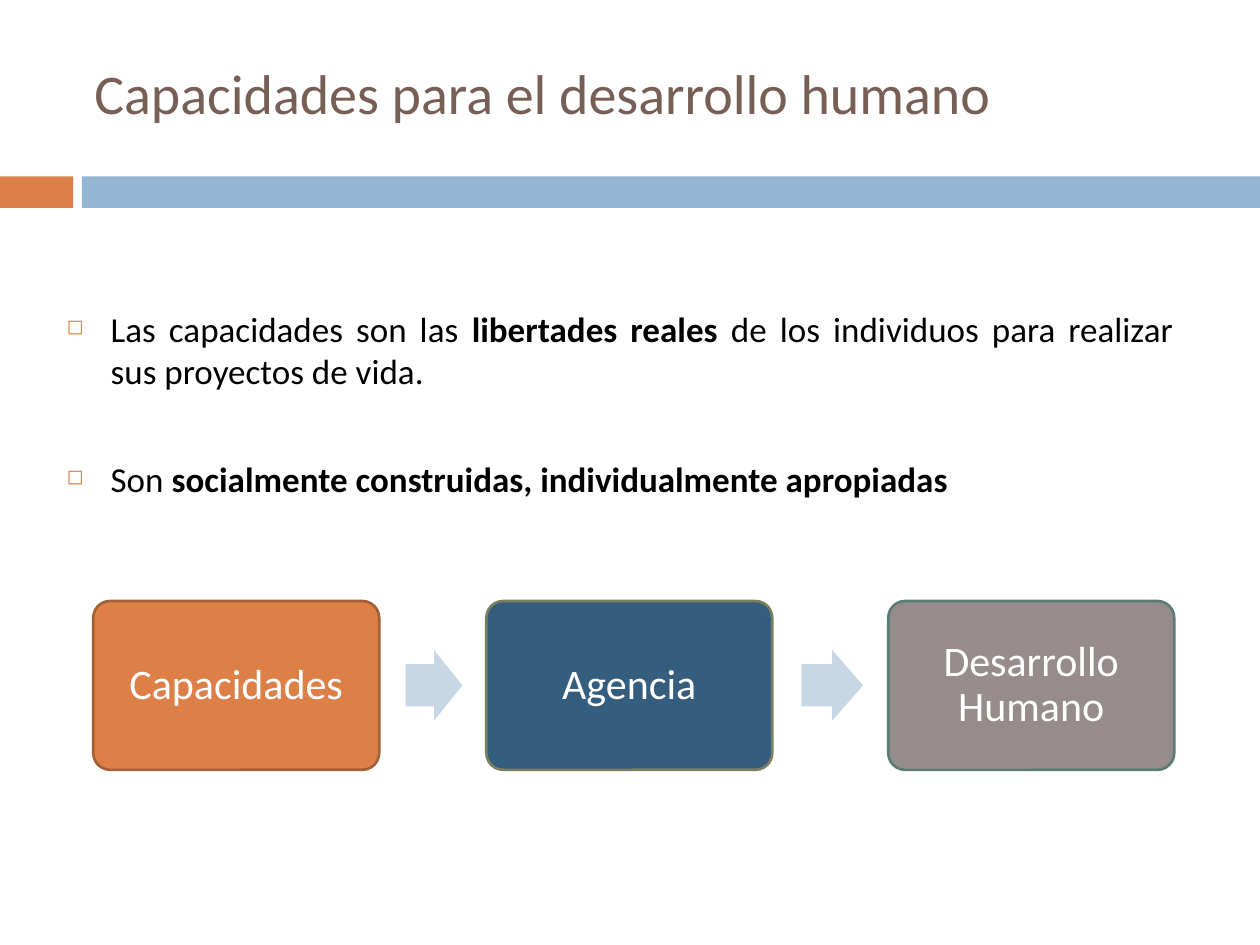
from lxml import etree
from pptx import Presentation
from pptx.dml.color import RGBColor
from pptx.enum.shapes import MSO_SHAPE
from pptx.enum.text import MSO_ANCHOR, PP_ALIGN
from pptx.oxml.ns import qn
from pptx.util import Inches, Pt

RECTANGLE = MSO_SHAPE.RECTANGLE
ROUNDED = MSO_SHAPE.ROUNDED_RECTANGLE
ARROW = MSO_SHAPE.RIGHT_ARROW
MIDDLE = MSO_ANCHOR.MIDDLE
CENTER = PP_ALIGN.CENTER
JUSTIFY = PP_ALIGN.JUSTIFY
FONT = "Calibri"
BLANK_LAYOUT = 6
COLORS = {
    "title": "775F55",
    "text": "000000",
    "white": "FFFFFF",
    "orange": "DD8047",
    "orange_line": "A35F35",
    "band": "94B6D2",
    "navy": "355D7E",
    "olive_line": "7A7F5F",
    "gray": "968C8C",
    "teal_line": "5B7C74",
    "arrow": "C8D7E5",
}
BULLETS = [
    [("Las capacidades son las ", False), ("libertades reales ", True),
     ("de los individuos para realizar sus proyectos de vida.", False)],
    [("Son ", False),
     ("socialmente construidas, individualmente apropiadas", True)],
]
STEPS = [
    ("Capacidades", "orange", "orange_line", 0),
    ("Agencia", "navy", "olive_line", 3.12),
    ("Desarrollo Humano", "gray", "teal_line", 6.31),
]


def color(name):
    return RGBColor.from_string(COLORS[name])


def format_run(run, size, color_name, bold=False):
    run.font.name = FONT
    run.font.size = Pt(size)
    run.font.bold = bold
    run.font.color.rgb = color(color_name)


def add_box(slide, kind, left, top, width, height, fill, line=None):
    shape = slide.shapes.add_shape(
        kind, Inches(left), Inches(top), Inches(width), Inches(height))
    shape.shadow.inherit = False
    shape.fill.solid()
    shape.fill.fore_color.rgb = color(fill)
    if line:
        shape.line.color.rgb = color(line)
        shape.line.width = Pt(1.5)
    else:
        shape.line.fill.background()
    return shape


def add_text_box(slide, left, top, width, height):
    text_box = slide.shapes.add_textbox(
        Inches(left), Inches(top), Inches(width), Inches(height))
    text_box.text_frame.word_wrap = True
    return text_box.text_frame


def add_title(slide, left, top, width, height):
    text_frame = add_text_box(slide, left, top, width, height)
    text_frame.vertical_anchor = MIDDLE
    text_frame.text = "Capacidades para el desarrollo humano"
    format_run(text_frame.paragraphs[0].runs[0], 32, "title")


def add_band(slide, left, top, width, height):
    accent, gap = 0.58, 0.07
    offset = accent + gap
    add_box(slide, RECTANGLE, left, top, accent, height, "orange")
    add_box(slide, RECTANGLE, left + offset, top, width - offset, height, "band")


def set_bullet(paragraph):
    properties = paragraph._p.get_or_add_pPr()
    properties.set("marL", str(Inches(0.35)))
    properties.set("indent", str(-Inches(0.35)))
    bullet_color = etree.SubElement(properties, qn("a:buClr"))
    etree.SubElement(bullet_color, qn("a:srgbClr"), val=COLORS["orange"])
    etree.SubElement(properties, qn("a:buSzPct"), val="60000")
    etree.SubElement(properties, qn("a:buChar"), char="◻")


def add_bullets(slide, left, top, width, height):
    text_frame = add_text_box(slide, left, top, width, height)
    for index, parts in enumerate(BULLETS):
        paragraph = text_frame.add_paragraph() if index else text_frame.paragraphs[0]
        paragraph.alignment = JUSTIFY
        paragraph.space_before = Pt(38 if index else 0)
        set_bullet(paragraph)
        for text, bold in parts:
            run = paragraph.add_run()
            run.text = text
            format_run(run, 20, "text", bold)


def add_step(slide, left, top, width, height, label, fill, line):
    shape = add_box(slide, ROUNDED, left, top, width, height, fill, line)
    shape.adjustments[0] = 0.1
    text_frame = shape.text_frame
    text_frame.word_wrap = True
    text_frame.vertical_anchor = MIDDLE
    text_frame.margin_left = text_frame.margin_right = Inches(0.14)
    text_frame.margin_top = text_frame.margin_bottom = Inches(0.14)
    text_frame.text = label
    paragraph = text_frame.paragraphs[0]
    paragraph.alignment = CENTER
    paragraph.line_spacing = 0.9
    format_run(paragraph.runs[0], 24, "white")


def add_process(slide, left, top, height):
    step_width, arrow_height = 2.27, 0.56
    arrow_top = top + (height - arrow_height) / 2
    for label, fill, line, offset in STEPS:
        add_step(slide, left + offset, top, step_width, height, label, fill, line)
    for offset, width in ((2.48, 0.45), (5.62, 0.49)):
        arrow = add_box(slide, ARROW, left + offset, arrow_top, width,
                        arrow_height, "arrow")
        arrow.adjustments[0] = 0.6
        arrow.adjustments[1] = 0.5


def main():
    presentation = Presentation()
    presentation.slide_width = Inches(10)
    presentation.slide_height = Inches(7.5)
    slide = presentation.slides.add_slide(presentation.slide_layouts[BLANK_LAYOUT])
    add_band(slide, 0, 1.4, 10, 0.25)
    add_title(slide, 0.65, 0.36, 9, 0.75)
    add_bullets(slide, 0.43, 2.39, 8.98, 1.65)
    add_process(slide, 0.74, 4.77, 1.34)
    presentation.save("out.pptx")


if __name__ == "__main__":
    main()
